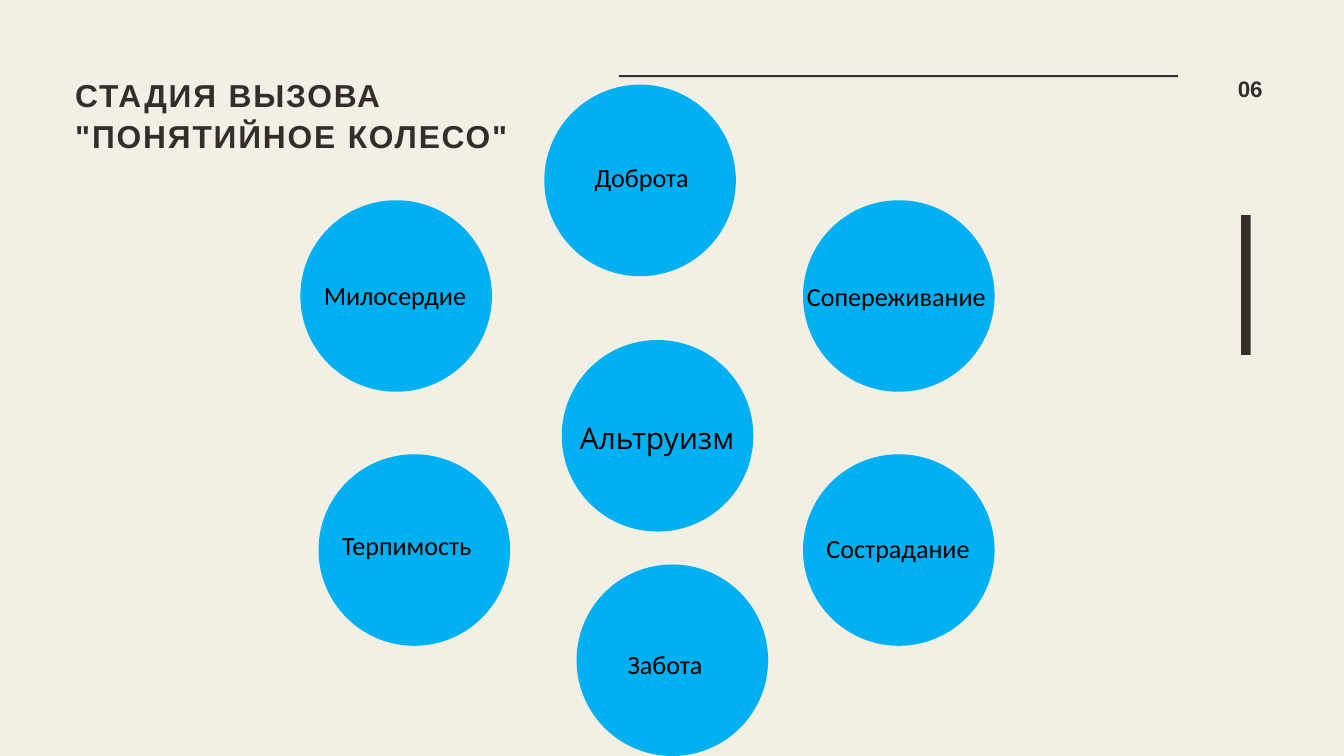
from pptx import Presentation
from pptx.dml.color import RGBColor
from pptx.enum.shapes import MSO_SHAPE
from pptx.enum.text import MSO_AUTO_SIZE, PP_ALIGN
from pptx.util import Pt

PX = 9144  # EMU per px, 100 px to the inch
RECT, OVAL = MSO_SHAPE.RECTANGLE, MSO_SHAPE.OVAL
FIT_SHAPE = MSO_AUTO_SIZE.SHAPE_TO_FIT_TEXT
LEFT, CENTER, RIGHT = PP_ALIGN.LEFT, PP_ALIGN.CENTER, PP_ALIGN.RIGHT

PAPER, INK, SKY, BLACK = "F2EFE5", "342D29", "00B0F0", "000000"
DIAMETER = 285

# left and top of each circle
CIRCLES = [(836, 506), (810, 126), (858, 840), (447, 298),
           (474, 676), (1195, 298), (1195, 676)]

# word, left, top, width
LABELS = [
    ("Милосердие", 472, 411, 234),
    ("Сопереживание", 1191, 412, 289),
    ("Терпимость", 499, 783, 215),
    ("Доброта", 875, 235, 162),
    ("Сострадание", 1220, 788, 235),
    ("Забота", 924, 960, 133),
]


def px(n):
    return int(n * PX)


def color(value):
    return RGBColor.from_string(value)


class Deck:
    def __init__(self, width, height, background):
        self.prs = Presentation()
        self.prs.slide_width, self.prs.slide_height = px(width), px(height)
        self.s = self.prs.slides.add_slide(self.prs.slide_layouts[6])
        fill = self.s.background.fill
        fill.solid()
        fill.fore_color.rgb = color(background)

    def shape(self, kind, x, y, w, h, fill):
        sp = self.s.shapes.add_shape(kind, px(x), px(y), px(w), px(h))
        sp.shadow.inherit = False
        sp.fill.solid()
        sp.fill.fore_color.rgb = color(fill)
        sp.line.fill.background()

    def text(self, text, x, y, w, h, size, font, ink, bold=False,
             align=LEFT, leading=None, tracking=0):
        """Wrapped text without margins; leading in points, tracking in 1/100 pt."""
        tf = self._frame(text, x, y, w, h, size, font, ink, bold)
        tf.word_wrap = True
        tf.margin_left = tf.margin_right = tf.margin_top = tf.margin_bottom = 0
        for p in tf.paragraphs:
            p.alignment = align
            p.line_spacing = Pt(leading)
            if tracking:
                for r in p.runs:
                    r.font._element.set("spc", str(tracking))

    def label(self, text, x, y, w):
        """One unwrapped word with the default margins."""
        tf = self._frame(text, x, y, w, 57, 28, "Calibri", BLACK, False)
        tf.word_wrap = False

    def _frame(self, text, x, y, w, h, size, font, ink, bold):
        tf = self.s.shapes.add_textbox(px(x), px(y), px(w), px(h)).text_frame
        tf.auto_size = FIT_SHAPE
        tf.text = text
        for p in tf.paragraphs:
            for r in p.runs:
                r.font.size = Pt(size)
                r.font.name = font
                r.font.bold = bold
                r.font.color.rgb = color(ink)
        return tf


def main():
    deck = Deck(2000, 1125, PAPER)
    deck.text('СТАДИЯ ВЫЗОВА\n"ПОНЯТИЙНОЕ КОЛЕСО"', 112, 108, 723, 122,
              34, "Arial", INK, bold=True, leading=44.2, tracking=200)
    deck.shape(RECT, 1847, 320, 14, 208, INK)
    deck.text("06", 1803, 112, 76, 40, 24, "Arial", INK, bold=True,
              align=RIGHT, leading=28.8)
    deck.shape(RECT, 921, 112, 832, 3, INK)

    for x, y in CIRCLES:
        deck.shape(OVAL, x, y, DIAMETER, DIAMETER, SKY)
    deck.text("Альтруизм", 862, 616, 232, 59, 32, "Open Sans", BLACK,
              align=CENTER, leading=44.8)
    for word, x, y, w in LABELS:
        deck.label(word, x, y, w)

    deck.prs.save("out.pptx")


if __name__ == "__main__":
    main()
